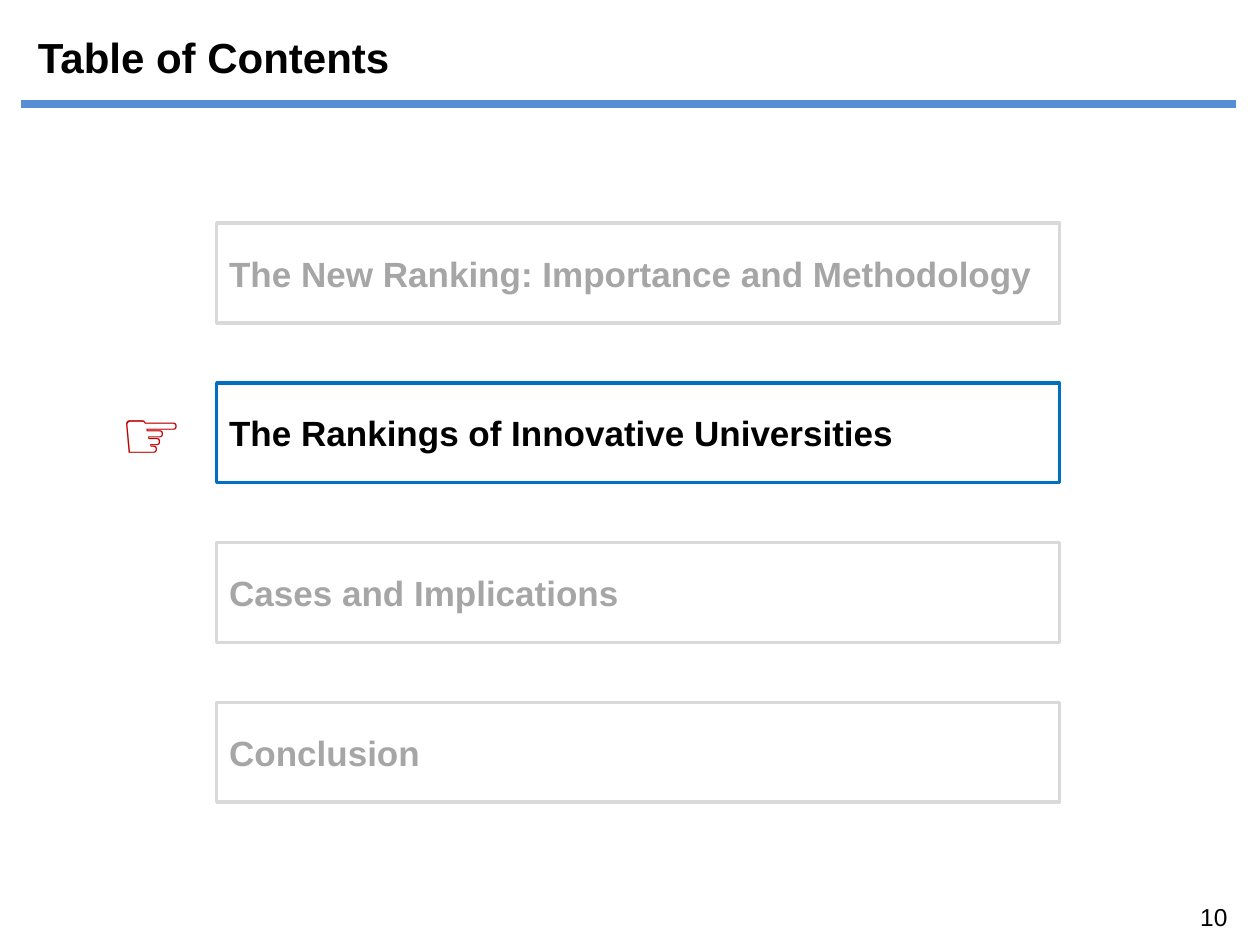
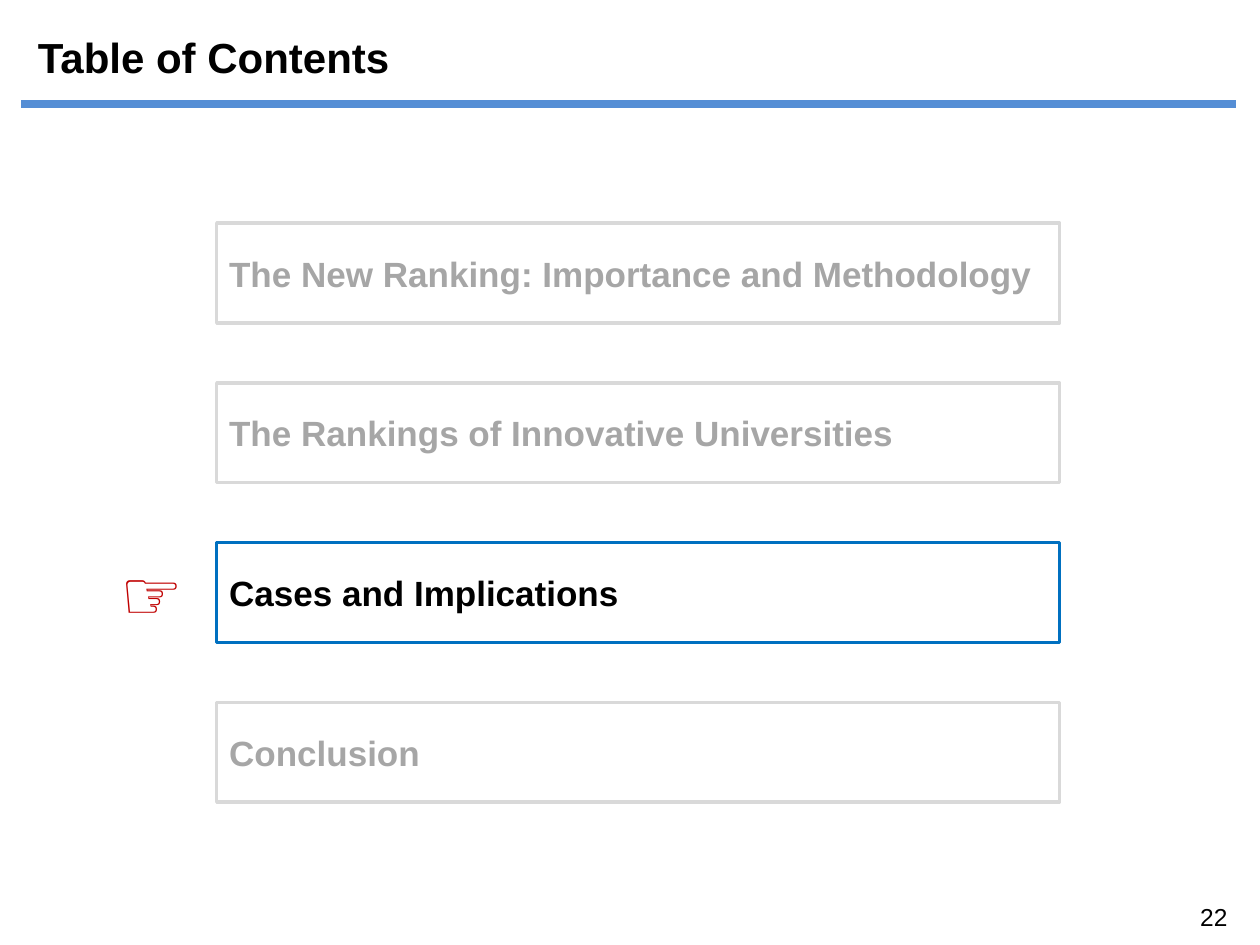
from pptx import Presentation
from pptx.dml.color import RGBColor
from pptx.enum.shapes import MSO_CONNECTOR, MSO_SHAPE
from pptx.enum.text import MSO_ANCHOR, MSO_AUTO_SIZE, PP_ALIGN
from pptx.oxml.ns import qn
from pptx.util import Cm, Pt
from lxml.etree import SubElement

COLORS = {
    "text": "000000", "band": "558ED5", "hand": "C00000", "fill": "FFFFFF",
    "live": "0070C0", "edge": "D9D9D9", "dim": "A6A6A6",
}
TOPICS = [
    "The New Ranking: Importance and Methodology",
    "The Rankings of Innovative Universities",
    "Cases and Implications",
    "Conclusion",
]
# Page number and index of the current topic
PAGES = [("10", 1), ("22", 2)]
TOP, STEP = 4.5, 3.22


def color(name):
    return RGBColor.from_string(COLORS[name])


def write(shape, text, size, tint="text", bold=False, align=PP_ALIGN.LEFT):
    frame = shape.text_frame
    frame.text = text
    frame.word_wrap = True
    frame.auto_size = MSO_AUTO_SIZE.NONE
    para = frame.paragraphs[0]
    para.alignment = align
    font = para.font
    font.name, font.size, font.bold = "Arial", Pt(size), bold
    font.color.rgb = color(tint)
    return frame


deck = Presentation()
deck.slide_width, deck.slide_height = Cm(25.4), Cm(19.05)

for page, live in PAGES:
    slide = deck.slides.add_slide(deck.slide_layouts[5])
    shapes = slide.shapes

    # Title
    title = shapes.title
    title.left, title.top, title.width, title.height = Cm(0.51), Cm(0.36), Cm(22.81), Cm(1.57)
    write(title, "Table of Contents", 24, bold=True).vertical_anchor = MSO_ANCHOR.MIDDLE

    # Band under the title
    band = shapes.add_connector(MSO_CONNECTOR.STRAIGHT, Cm(0.43), Cm(2.09), Cm(24.92), Cm(2.09))
    band.line.color.rgb = color("band")
    band.line.width = Pt(4.5)
    SubElement(band.element.spPr, qn("a:effectLst"))

    # Page number
    foot = shapes.add_textbox(Cm(23.62), Cm(18.06), Cm(1.7), Cm(0.89))
    write(foot, page, 14, align=PP_ALIGN.CENTER)

    # Hand beside the current topic
    hand = shapes.add_textbox(Cm(2.18), Cm(TOP + live * STEP + 0.03), Cm(2.08), Cm(1.96))
    write(hand, "☞", 40, "hand")

    # Topic boxes
    for row, topic in enumerate(TOPICS):
        box = shapes.add_shape(MSO_SHAPE.RECTANGLE, Cm(4.37), Cm(TOP + row * STEP), Cm(16.99), Cm(2.01))
        box.shadow.inherit = False
        box.fill.solid()
        box.fill.fore_color.rgb = color("fill")
        box.line.color.rgb = color("live" if row == live else "edge")
        box.line.width = Pt(2)
        frame = write(box, topic, 20, "text" if row == live else "dim", bold=True)
        frame.vertical_anchor = MSO_ANCHOR.MIDDLE
        frame.paragraphs[0].space_before = Pt(4)

deck.save("out.pptx")
